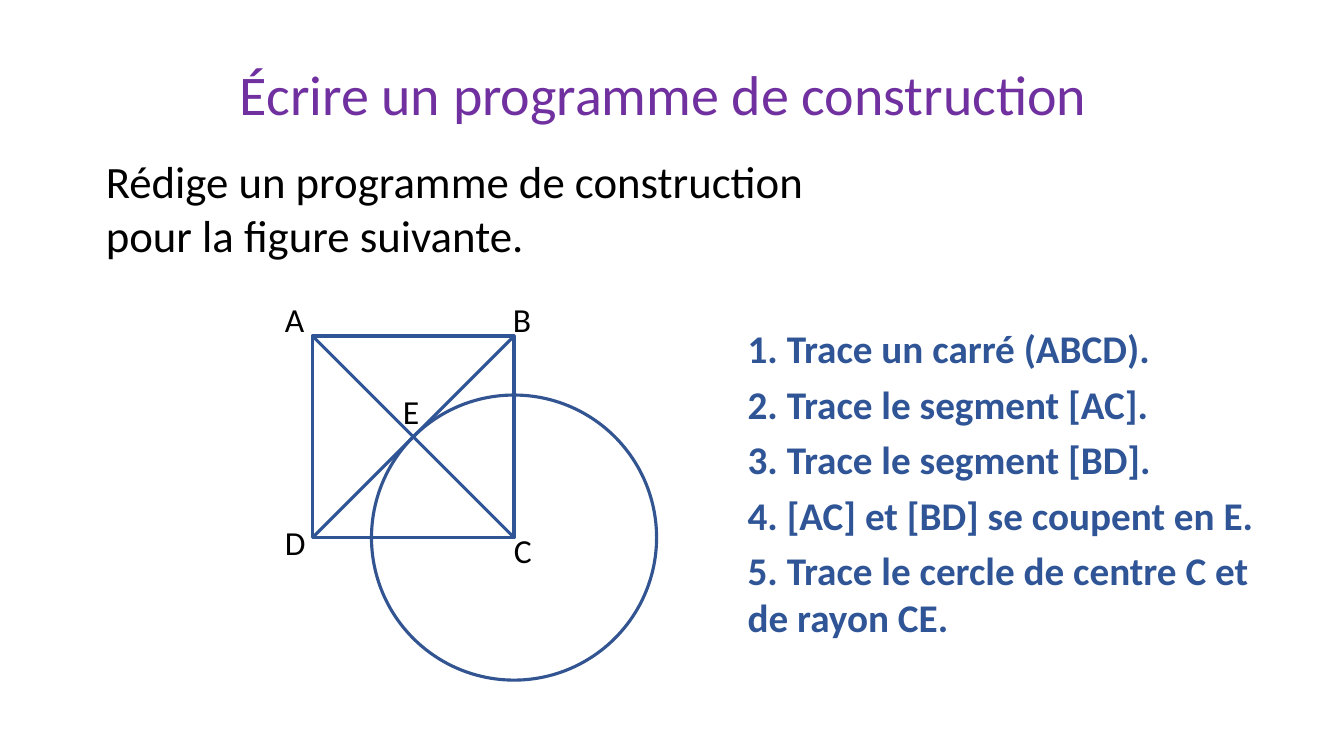
import math
from pptx import Presentation
from pptx.dml.color import RGBColor
from pptx.enum.shapes import MSO_CONNECTOR, MSO_SHAPE
from pptx.enum.text import MSO_ANCHOR, MSO_AUTO_SIZE, PP_ALIGN
from pptx.oxml.ns import qn
from pptx.util import Pt
from lxml import etree

RECTANGLE, OVAL = MSO_SHAPE.RECTANGLE, MSO_SHAPE.OVAL
STRAIGHT = MSO_CONNECTOR.STRAIGHT
TOP, MIDDLE = MSO_ANCHOR.TOP, MSO_ANCHOR.MIDDLE
LEFT, CENTER = PP_ALIGN.LEFT, PP_ALIGN.CENTER
GROW, FIXED = MSO_AUTO_SIZE.SHAPE_TO_FIT_TEXT, MSO_AUTO_SIZE.NONE

PURPLE, BLACK, BLUE, CIRCLE_BLUE = "7030A0", "000000", "2F5597", "325491"


def color(value):
    return RGBColor.from_string(value)


def assign(target, values):
    for name, value in values.items():
        setattr(target, name, value)


class GeometrySlide:
    font_name = "Calibri"
    stroke = 2.25

    def __init__(self, slide):
        self.slide = slide

    def text(self, lines, box, size, ink=BLACK, bold=False, wrap=True,
             anchor=TOP, fit=GROW, **paragraph_format):
        frame = self.slide.shapes.add_textbox(*map(Pt, box)).text_frame
        assign(frame, {"word_wrap": wrap, "vertical_anchor": anchor, "auto_size": fit})
        frame.text = "\n".join(lines)
        for paragraph in frame.paragraphs:
            assign(paragraph, {"alignment": LEFT, **paragraph_format})
            font = paragraph.runs[0].font
            assign(font, {"name": self.font_name, "size": Pt(size), "bold": bold})
            font.color.rgb = color(ink)

    def outline(self, kind, box, ink):
        shape = self.slide.shapes.add_shape(kind, *map(Pt, box))
        shape.shadow.inherit = False
        shape.fill.background()
        self.draw_line(shape.line, ink)

    def segment(self, start, end, ink):
        connector = self.slide.shapes.add_connector(STRAIGHT, *map(Pt, start + end))
        self.draw_line(connector.line, ink)
        etree.SubElement(connector._element.spPr, qn("a:effectLst"))

    def draw_line(self, line, ink):
        line.width = Pt(self.stroke)
        line.color.rgb = color(ink)


def main():
    presentation = Presentation()
    assign(presentation, {"slide_width": Pt(960), "slide_height": Pt(540)})
    page = GeometrySlide(presentation.slides.add_slide(presentation.slide_layouts[6]))

    page.text(["Écrire un programme de construction"], (136, 26, 675.5, 86.5), 40,
              PURPLE, anchor=MIDDLE, fit=FIXED, alignment=CENTER, line_spacing=0.9)
    page.text(["Rédige un programme de construction pour la figure suivante."],
              (68.5, 106.5, 531.5, 85), 32)

    side = 144
    left, top = 223.2, 240
    right, bottom = left + side, top + side
    radius = side / math.sqrt(2)
    page.outline(RECTANGLE, (left, top, side, side), BLUE)
    page.outline(OVAL, (right - radius, bottom - radius, 2 * radius, 2 * radius),
                 CIRCLE_BLUE)
    page.segment((left, bottom), (right, top), BLUE)
    page.segment((right, bottom), (left, top), BLUE)

    vertices = {"A": (196.5, 210.2), "E": (280.8, 275.8), "D": (196.5, 369.4),
                "B": (359.3, 210.2), "C": (360, 375.1)}
    for letter, corner in vertices.items():
        page.text([letter], (*corner, 28, 36), 24, wrap=False)

    steps = ["Trace un carré (ABCD).", "Trace le segment [AC].",
             "Trace le segment [BD].", "[AC] et [BD] se coupent en E.",
             "Trace le cercle de centre C et de rayon CE."]
    page.text([f"{number}. {step}" for number, step in enumerate(steps, 1)],
              (527, 228.2, 386.6, 234.7), 28, BLUE, bold=True, space_after=Pt(6))

    presentation.save("out.pptx")


if __name__ == "__main__":
    main()
